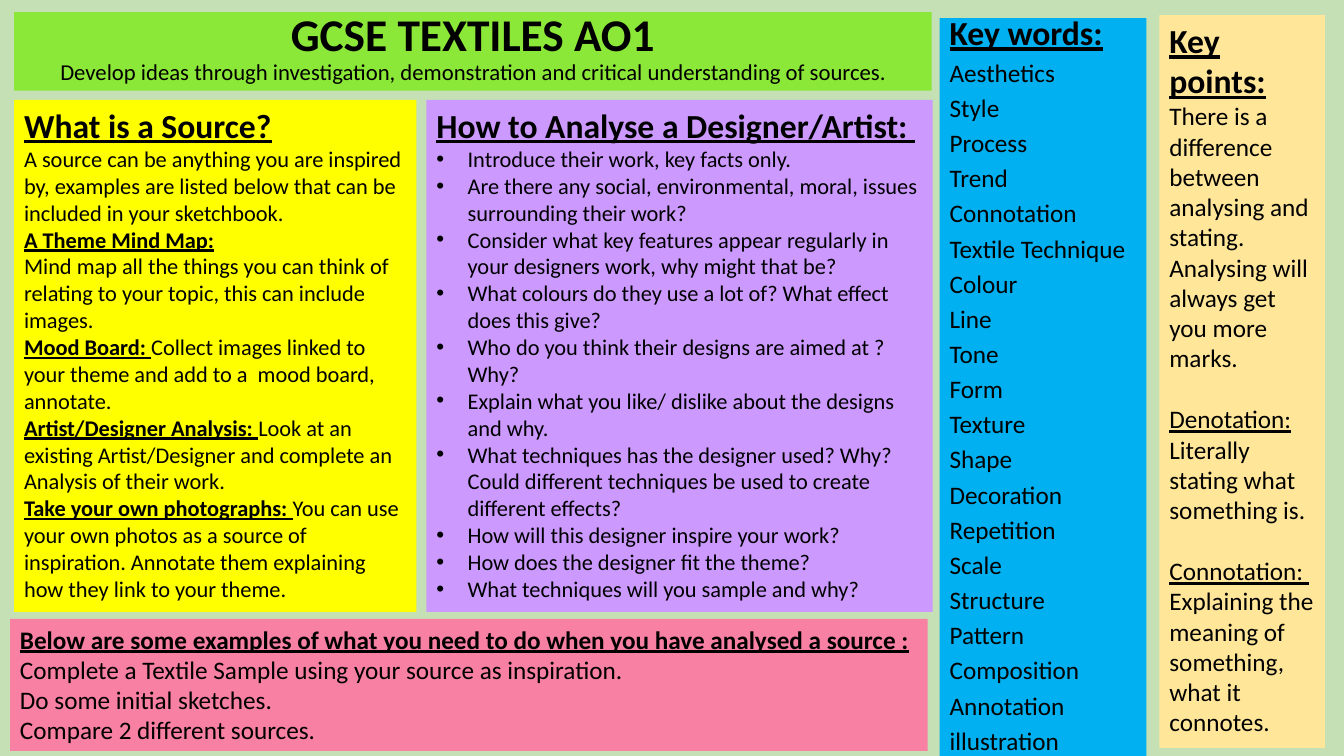
from dataclasses import dataclass

import pptx
import pptx.dml.color
import pptx.enum.text
import pptx.util
from lxml import etree
from pptx.oxml import ns

Inches, Pt = pptx.util.Inches, pptx.util.Pt
RGBColor = pptx.dml.color.RGBColor
Align, Anchor = pptx.enum.text.PP_ALIGN, pptx.enum.text.MSO_ANCHOR
AutoSize = pptx.enum.text.MSO_AUTO_SIZE

FONT = "Calibri"
COLORS = {
    "background": "C5E0B4", "text": "000000", "title": "8CE838",
    "key_words": "00B0F0", "source": "FFFF00", "analyse": "CC99FF",
    "examples": "F880A2", "key_points": "FFE699",
}
BULLET_INDENT = 0.31


@dataclass
class Run:
    text: str
    size: float
    bold: bool = False
    underline: bool = False
    break_after: bool = False


@dataclass
class Para:
    runs: list[Run]
    bullet: bool = False
    before: float = 0


@dataclass
class Panel:
    color: str
    box: tuple[float, float, float, float]
    paras: list[Para]
    line_spacing: float = 1.0
    align: Align = Align.LEFT
    anchor: Anchor = Anchor.TOP
    grow: bool = True


def heading(text: str, size: float = 24, before: float = 0) -> Para:
    return Para([Run(text, size, bold=True, underline=True)], before=before)


def plain(text: str, size: float, bullet: bool = False, before: float = 0) -> Para:
    return Para([Run(text, size)], bullet, before)


def labelled(label: str, text: str, size: float, bold: bool = True, before: float = 0) -> Para:
    runs = [Run(label, size, bold, underline=True)]
    if text:
        runs.append(Run(text, size))
    return Para(runs, before=before)


def add_bullet(p) -> None:
    pPr = p._p.get_or_add_pPr()
    pPr.set("marL", str(Inches(BULLET_INDENT)))
    pPr.set("indent", str(-Inches(BULLET_INDENT)))
    etree.SubElement(pPr, ns.qn("a:buFont")).set("typeface", "Arial")
    etree.SubElement(pPr, ns.qn("a:buChar")).set("char", "•")


def add_para(p, para: Para, panel: Panel) -> None:
    p.alignment = panel.align
    p.line_spacing = panel.line_spacing
    p.space_before = Pt(para.before)
    if para.bullet:
        add_bullet(p)
    for run in para.runs:
        r = p.add_run()
        r.text = run.text
        r.font.name = FONT
        r.font.size = Pt(run.size)
        r.font.bold = run.bold
        r.font.underline = run.underline
        r.font.color.rgb = RGBColor.from_string(COLORS["text"])
        if run.break_after:
            p.add_line_break()


def add_panel(s, panel: Panel) -> None:
    sp = s.shapes.add_textbox(*map(Inches, panel.box))
    sp.fill.solid()
    sp.fill.fore_color.rgb = RGBColor.from_string(COLORS[panel.color])
    tf = sp.text_frame
    tf.word_wrap = True
    tf.auto_size = AutoSize.SHAPE_TO_FIT_TEXT if panel.grow else AutoSize.NONE
    tf.vertical_anchor = panel.anchor
    for i, para in enumerate(panel.paras):
        add_para(tf.add_paragraph() if i else tf.paragraphs[0], para, panel)


KEY_WORDS = [
    "Aesthetics", "Style", "Process", "Trend", "Connotation", "Textile Technique",
    "Colour", "Line", "Tone", "Form", "Texture", "Shape", "Decoration", "Repetition",
    "Scale", "Structure", "Pattern", "Composition", "Annotation", "illustration",
]
QUESTIONS = [
    "Introduce their work, key facts only.",
    "Are there any social, environmental, moral, issues surrounding their work?",
    "Consider what key features appear regularly in your designers work, why might that be?",
    "What colours do they use a lot of? What effect does this give?",
    "Who do you think their designs are aimed at ? Why?",
    "Explain what you like/ dislike about the designs and why.",
    "What techniques has the designer used? Why? Could different techniques be used "
    "to create different effects?",
    "How will this designer inspire your work?",
    "How does the designer fit the theme?",
    "What techniques will you sample and why?",
]
TASKS = [
    "Complete a Textile Sample using your source as inspiration.",
    "Do some initial sketches.",
    "Compare 2 different sources.",
]

PANELS = [
    Panel("title", (0.14, 0.12, 9.1, 0.78), [Para([
        Run("GCSE TEXTILES AO1", 32.4, bold=True, break_after=True),
        Run("Develop ideas through investigation, demonstration and critical "
            "understanding of sources.", 16.2),
    ])], line_spacing=0.9, align=Align.CENTER, anchor=Anchor.BOTTOM, grow=False),
    Panel("key_words", (9.32, 0.18, 2.05, 7.37),
          [heading("Key words:", before=10)] + [plain(w, 18, before=10) for w in KEY_WORDS],
          line_spacing=0.7, grow=False),
    Panel("source", (0.14, 0.99, 3.99, 5.08), [
        heading("What is a Source?"),
        plain("A source can be anything you are inspired by, examples are listed below "
              "that can be included in your sketchbook.", 16),
        labelled("A Theme Mind Map:", "", 16),
        plain("Mind map all the things you can think of relating to your topic, "
              "this can include images.", 16),
        labelled("Mood Board: ", "Collect images linked to your theme and add to a  "
                 "mood board, annotate.", 16),
        labelled("Artist/Designer Analysis: ", "Look at an existing Artist/Designer and "
                 "complete an Analysis of their work.", 16),
        labelled("Take your own photographs: ", "You can use your own photos as a source of "
                 "inspiration. Annotate them explaining how they link to your theme.", 16),
    ]),
    Panel("analyse", (4.23, 0.99, 5.02, 5.08),
          [heading("How to Analyse a Designer/Artist: ")]
          + [plain(q, 16, bullet=True) for q in QUESTIONS]),
    Panel("examples", (0.1, 6.14, 9.1, 1.31),
          [heading("Below are some examples of what you need to do when you have "
                   "analysed a source :", 18)]
          + [plain(t, 18) for t in TASKS]),
    Panel("key_points", (11.5, 0.15, 1.64, 7.27), [
        heading("Key points:"),
        plain("There is a difference between analysing and stating. Analysing will "
              "always get you more marks.", 18),
        labelled("Denotation: ", "Literally stating what something is.", 18,
                 bold=False, before=22),
        labelled("Connotation: ", "", 18, bold=False, before=22),
        plain("Explaining the meaning of something, what it connotes.", 18),
    ]),
]


def main() -> None:
    prs = pptx.Presentation()
    prs.slide_width, prs.slide_height = Inches(13.33), Inches(7.5)
    s = prs.slides.add_slide(prs.slide_layouts[6])

    # Background
    s.background.fill.solid()
    s.background.fill.fore_color.rgb = RGBColor.from_string(COLORS["background"])

    # Coloured text panels
    for panel in PANELS:
        add_panel(s, panel)

    prs.save("out.pptx")


if __name__ == "__main__":
    main()
